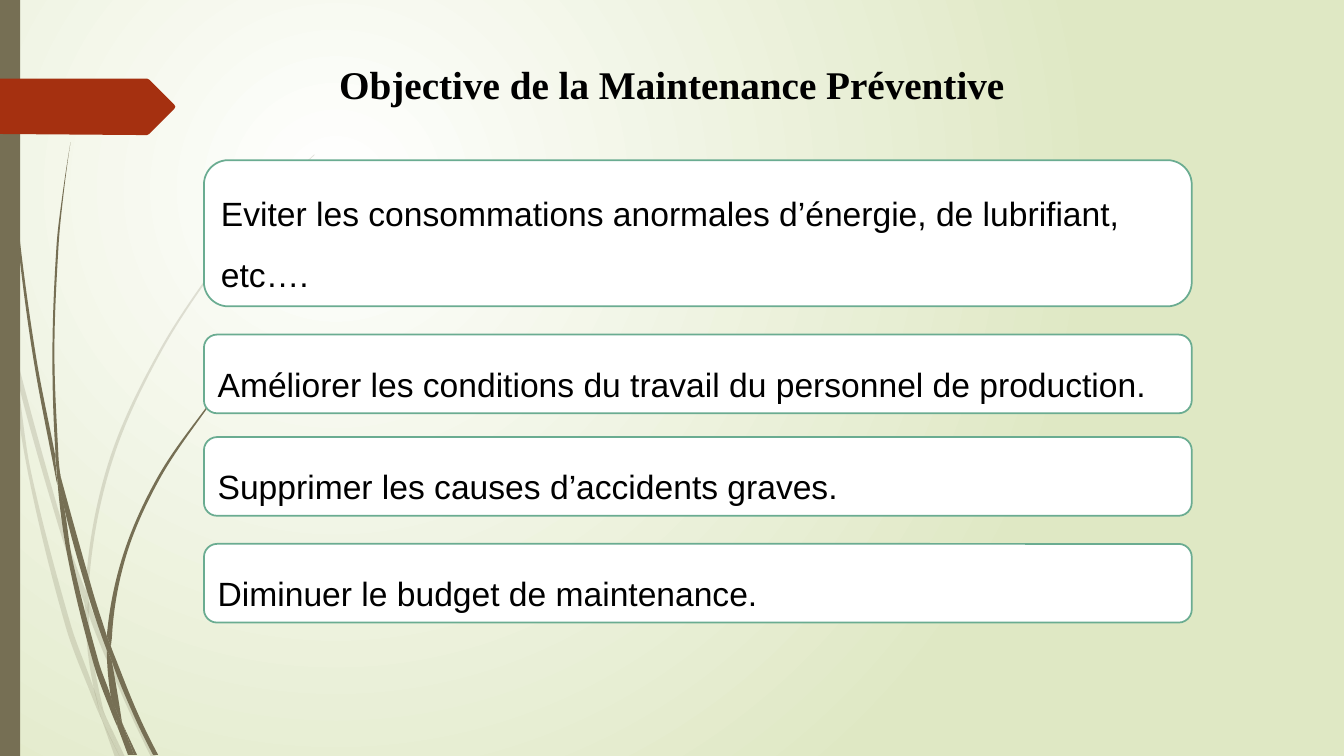
import math
from dataclasses import dataclass
from lxml import etree
from pptx import Presentation
from pptx import util as u
from pptx.dml import color
from pptx.enum import shapes, text
from pptx.oxml import ns


@dataclass(frozen=True)
class Theme:
    ink: str = "000000"
    paper: str = "FFFFFF"
    meadow: str = "DFE8C4"
    bark: str = "766F54"
    rust: str = "A53010"
    border: str = "6AAC91"
    title_font: str = "Times New Roman"
    body_font: str = "Arial"
    title_size: int = 28
    body_size: int = 24
    border_width: float = 1.25


@dataclass(frozen=True)
class Box:
    left: float
    top: float
    width: float
    height: float


THEME = Theme()
GRID = 0.72

PALE_BLADES = [
    [[(11, 350), (9, 322), (0, 282)], [(0, 299), (10, 344)]],
    [[(14, 345), (17, 376), (58, 522), (84, 599)], [(85, 586), (62, 520), (14, 345)]],
    [[(88, 596), (88, 610), (123, 694), (150, 751)],
     [(155, 751), (127, 692), (92, 607), (88, 596)]],
    [[(119, 751), (124, 751)], [(105, 711)]],
    [[(11, 350), (28, 470), (65, 621), (92, 693), (101, 714)],
     [(99, 707), (93, 683), (70, 619), (31, 469), (17, 376), (11, 350)]],
    [[(84, 599), (87, 646), (93, 683), (96, 692), (105, 711)],
     [(103, 706), (91, 646), (88, 610), (88, 608), (84, 599)]],
    [[(88, 584), (110, 462), (160, 349), (229, 245), (268, 198), (290, 175), (312, 154)],
     [(312, 153), (289, 175), (268, 197), (228, 244), (158, 348), (107, 461), (85, 584)],
     [(85, 586), (88, 596)]],
    [[(101, 714), (114, 751)], [(119, 751)]],
    [[(88, 608), (88, 610)], [(88, 596), (85, 586)], [(84, 599)]],
    [[(96, 692), (93, 683)], [(99, 707), (101, 714), (119, 751)], [(105, 711)]],
]
DARK_BLADES = [
    [[(7, 110), (17, 233), (33, 355), (56, 477), (57, 481)],
     [(55, 457), (55, 453), (36, 355), (19, 232), (8, 109), (5, 48), (4, 0)],
     [(3, 0), (4, 48), (7, 110)]],
    [[(60, 472), (64, 505), (88, 592), (106, 645)],
     [(106, 633), (106, 631), (93, 590), (60, 472)]],
    [[(110, 641), (111, 656), (132, 708), (152, 749)],
     [(157, 749), (136, 706), (113, 649), (110, 641)]],
    [[(57, 477), (68, 557), (93, 659), (111, 708), (117, 722)],
     [(116, 717), (110, 691), (98, 657), (72, 556), (64, 505), (57, 477)]],
    [[(60, 472), (58, 453), (54, 349), (58, 245), (63, 193), (70, 141)],
     [(70, 141), (62, 193), (56, 245), (52, 349), (55, 449), (60, 472)]],
    [[(133, 749), (136, 749)], [(122, 719)]],
    [[(57, 477), (64, 505)], [(60, 472), (55, 449)], [(55, 453)]],
    [[(111, 633), (125, 552), (158, 476), (205, 406), (231, 374), (245, 359), (261, 344)],
     [(260, 344), (245, 358), (231, 373), (204, 405), (156, 474), (122, 551), (106, 631)],
     [(110, 641)]],
    [[(117, 722), (127, 749)], [(131, 749)]],
    [[(106, 645), (110, 691), (116, 706), (122, 719)],
     [(121, 716), (111, 656), (109, 651), (106, 645)]],
    [[(106, 645), (109, 651), (111, 656)], [(110, 641), (106, 631)], [(106, 633)]],
    [[(116, 706), (110, 691)], [(116, 717), (117, 722), (130, 749)],
     [(133, 749), (122, 719)]],
]
TAG_OUTLINE = [[(173, 30), (148, 55)], [(146, 56), (136, 56)], [(0, 55)],
               [(0, 0), (146, 0)], [(148, 1), (173, 26)], [(174, 28)]]

OBJECTIVES = [
    (114.4, 104.4, "Eviter les consommations anormales d’énergie, de lubrifiant, etc…."),
    (239, 56.2, "Améliorer les conditions du travail du personnel de production."),
    (388.5, 56.2, "Diminuer le budget de maintenance."),
    (312.2, 56.2, "Supprimer les causes d’accidents graves."),
]


def rgb(value):
    return color.RGBColor.from_string(value)


def direction(start, end):
    return math.atan2(end[1] - start[1], end[0] - start[0])


def headings(edge):
    inner = [direction(before, after) for before, after in zip(edge, edge[2:])]
    if not inner:
        return [direction(edge[0], edge[-1])] * len(edge)
    first = 2 * direction(edge[0], edge[1]) - inner[0]
    last = 2 * direction(edge[-2], edge[-1]) - inner[-1]
    return [first, *inner, last]


def curve_handles(edge):
    angles = headings(edge)
    handles = [None]
    for index, (start, end) in enumerate(zip(edge, edge[1:])):
        if len(edge) == 2:
            handles.append(None)
            continue
        reach = math.dist(start, end) / 3
        leave, arrive = angles[index], angles[index + 1]
        handles.append((
            (start[0] + reach * math.cos(leave), start[1] + reach * math.sin(leave)),
            (end[0] - reach * math.cos(arrive), end[1] - reach * math.sin(arrive))))
    return handles


def paint(shape, fill, opacity=None):
    shape.shadow.inherit = False
    shape.fill.solid()
    shape.fill.fore_color.rgb = rgb(fill)
    shape.line.fill.background()
    if opacity is not None:
        swatch = shape.fill._xPr.find(".//" + ns.qn("a:srgbClr"))
        etree.SubElement(swatch, ns.qn("a:alpha"), val=str(opacity * 1000))


def draw_outline(page, box, edges, fill, opacity=None):
    def locate(point):
        return u.Pt(box.left + point[0] * GRID), u.Pt(box.top + point[1] * GRID)

    points = [locate(point) for edge in edges for point in edge]
    handles = [pair for edge in edges for pair in curve_handles(edge)]
    builder = page.shapes.build_freeform(*points[0], scale=1.0)
    builder.add_line_segments(points[1:], close=True)
    shape = builder.convert_to_shape()
    lines = list(shape.element.iter(ns.qn("a:lnTo")))
    for line, pair in zip(lines, handles[1:]):
        if pair is None:
            continue
        line.tag = ns.qn("a:cubicBezTo")
        for position, handle in enumerate(pair):
            x, y = locate(handle)
            line.insert(position, etree.Element(
                ns.qn("a:pt"), x=str(x - shape.left), y=str(y - shape.top)))
    paint(shape, fill, opacity)


def place(shape, box):
    shape.left, shape.top = u.Pt(box.left), u.Pt(box.top)
    shape.width, shape.height = u.Pt(box.width), u.Pt(box.height)


def write(frame, wording, font, size, bold=False, spacing=None):
    frame.auto_size = text.MSO_AUTO_SIZE.SHAPE_TO_FIT_TEXT
    para = frame.paragraphs[0]
    para.alignment = text.PP_ALIGN.LEFT
    para.line_spacing = spacing
    span = para.add_run()
    span.text = wording
    span.font.name = font
    span.font.size = u.Pt(size)
    span.font.bold = bold
    span.font.color.rgb = rgb(THEME.ink)


def draw_background(page):
    fill = page.background.fill
    fill.gradient()
    for stop, shade in zip(fill.gradient_stops, (THEME.paper, THEME.meadow)):
        stop.color.rgb = rgb(shade)
    gradient = page.element.find(".//" + ns.qn("a:gradFill"))
    linear = gradient.find(ns.qn("a:lin"))
    radial = etree.Element(ns.qn("a:path"), path="circle")
    etree.SubElement(radial, ns.qn("a:fillToRect"),
                     l="50000", t="50000", r="100000", b="100000")
    gradient.replace(linear, radial)


def draw_sidebar(page, box):
    for edges in PALE_BLADES:
        draw_outline(page, box, edges, THEME.bark, 20)
    for edges in DARK_BLADES:
        draw_outline(page, box, edges, THEME.bark)
    strip = page.shapes.add_shape(shapes.MSO_SHAPE.RECTANGLE, 0, 0, 0, 0)
    place(strip, Box(box.left, box.top, 14.4, box.height))
    paint(strip, THEME.bark)
    tag = Box(box.left, box.top + 56.16, 125.28, 40.32)
    draw_outline(page, tag, TAG_OUTLINE, THEME.rust)


def draw_title(page, box):
    title = page.shapes.title
    place(title, box)
    title.text_frame.word_wrap = False
    title.text_frame.vertical_anchor = text.MSO_ANCHOR.TOP
    write(title.text_frame, "Objective de la Maintenance Préventive",
          THEME.title_font, THEME.title_size, bold=True)


def draw_objective(page, box, wording):
    card = page.shapes.add_shape(shapes.MSO_SHAPE.ROUNDED_RECTANGLE, 0, 0, 0, 0)
    place(card, box)
    paint(card, THEME.paper)
    card.line.color.rgb = rgb(THEME.border)
    card.line.width = u.Pt(THEME.border_width)
    card.text_frame.word_wrap = True
    card.text_frame.vertical_anchor = text.MSO_ANCHOR.MIDDLE
    write(card.text_frame, wording, THEME.body_font, THEME.body_size, spacing=1.5)


def main():
    deck = Presentation()
    deck.slide_width, deck.slide_height = u.Pt(960), u.Pt(540)
    page = deck.slides.add_slide(deck.slide_layouts[5])
    draw_background(page)
    draw_sidebar(page, Box(0, 0, 225, 540))
    draw_title(page, Box(235.1, 39.6, 494.6, 41))
    for top, height, wording in OBJECTIVES:
        draw_objective(page, Box(145.7, top, 705.6, height), wording)
    deck.save("out.pptx")


if __name__ == "__main__":
    main()
